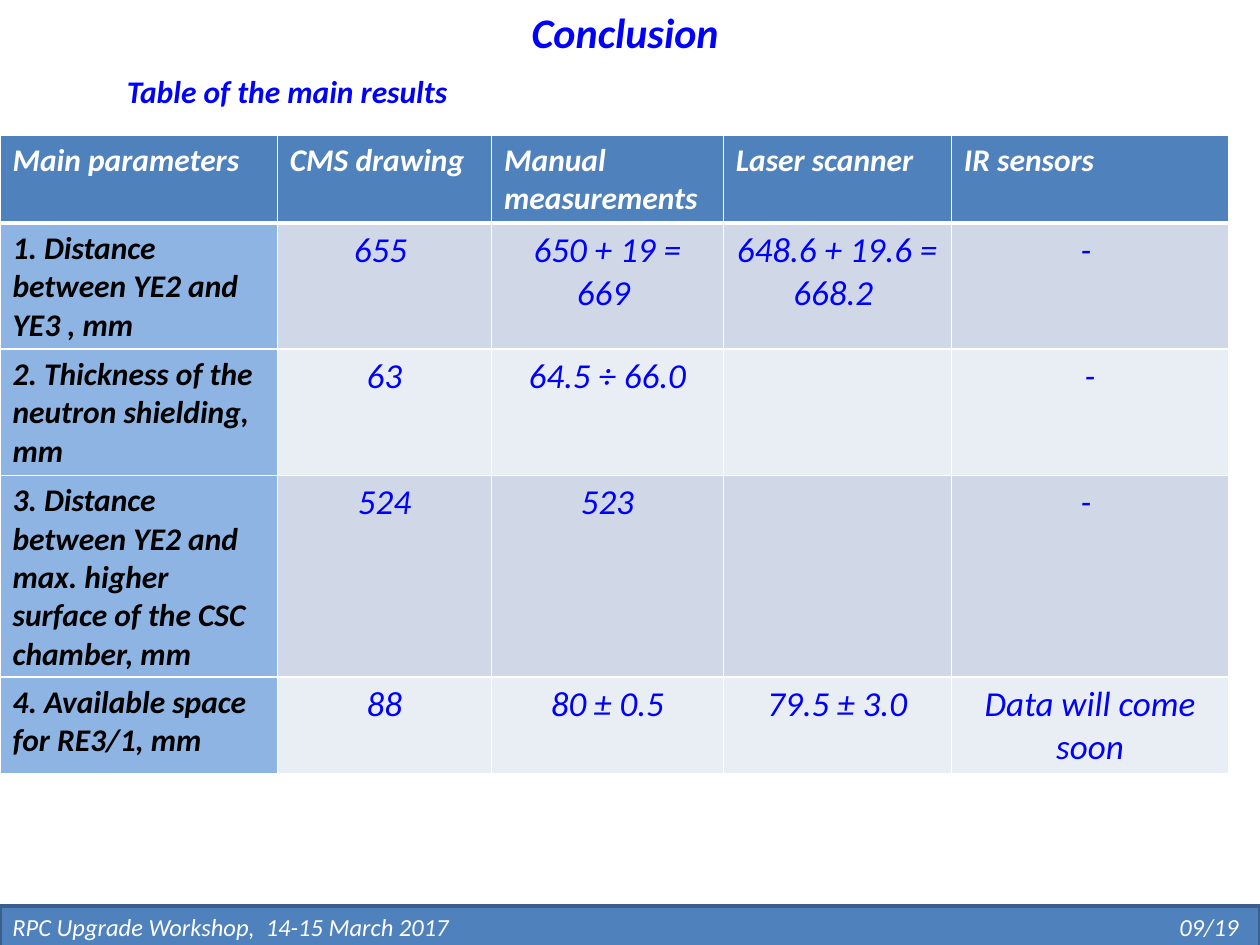
from dataclasses import dataclass

from lxml import etree
from pptx import Presentation
from pptx import util as u
from pptx.dml.color import RGBColor
from pptx.enum import shapes, text
from pptx.oxml import ns


@dataclass(frozen=True)
class Theme:
    font: str = "Calibri"
    accent: str = "0000FF"
    bar: str = "4F81BD"
    bar_line: str = "3A5F8C"
    label: str = "8EB4E3"
    bands: tuple = ("D0D8E8", "E9EDF4")
    light: str = "FFFFFF"
    dark: str = "000000"
    title_size: int = 24
    value_size: int = 20
    label_size: int = 18
    footer_size: int = 14


THEME = Theme()
HEADERS = ["Main parameters", "CMS drawing", "Manual measurements",
           "Laser scanner", "IR sensors"]
RESULTS = [
    ["1. Distance between YE2 and YE3 , mm", "655 ", "650 + 19 = 669 ",
     "648.6 + 19.6 = 668.2 ", "- "],
    ["2. Thickness of the neutron shielding, mm", "63", "64.5 ÷ 66.0", "", "-"],
    ["3. Distance between YE2 and max. higher surface of the CSC chamber, mm",
     "524", "523", "", "- "],
    ["4. Available space for RE3/1, mm", "88", "80 ± 0.5", "79.5 ± 3.0",
     "Data will come soon"],
]
COLUMN_WIDTHS = [5.59, 4.32, 4.67, 4.6, 5.59]
ROW_HEIGHTS = [1.75, 2.54, 2.54, 4.07, 1.93]


def rgb(color):
    return RGBColor.from_string(color)


def add_text(paragraph, content, size, color, bold=False, align=text.PP_ALIGN.LEFT):
    paragraph.alignment = align
    run = paragraph.add_run()
    run.text = content
    font = run.font
    font.name, font.size = THEME.font, u.Pt(size)
    font.bold, font.italic = bold, True
    font.color.rgb = rgb(color)


def add_title(slide, content):
    title = slide.shapes.title
    title.left, title.top = u.Cm(0), u.Cm(0)
    title.width, title.height = u.Cm(25.4), u.Cm(1.27)
    title.line.color.rgb = rgb(THEME.light)
    title.line.width = u.Pt(0.75)
    title.text_frame.vertical_anchor = text.MSO_ANCHOR.MIDDLE
    add_text(title.text_frame.paragraphs[0], content, THEME.title_size,
             THEME.accent, True, text.PP_ALIGN.CENTER)


def add_subtitle(slide, content):
    box = slide.shapes.add_textbox(u.Cm(2.31), u.Cm(1.32), u.Cm(7.65), u.Cm(1.02))
    box.text_frame.word_wrap = False
    add_text(box.text_frame.paragraphs[0], content, THEME.label_size,
             THEME.accent, True)


def set_borders(cell, top=1, bottom=1):
    properties = cell._tc.get_or_add_tcPr()
    for side, width in (("L", 1), ("R", 1), ("T", top), ("B", bottom)):
        line = etree.SubElement(properties, ns.qn(f"a:ln{side}"), w=str(u.Pt(width)))
        fill = etree.SubElement(line, ns.qn("a:solidFill"))
        etree.SubElement(fill, ns.qn("a:srgbClr"), val=THEME.light)


def fill_cell(cell, content, row, column):
    # Borders come before the fill in the cell properties
    set_borders(cell, top=3 if row == 1 else 1, bottom=3 if row == 0 else 1)
    if row == 0:
        fill, style = THEME.bar, (THEME.label_size, THEME.light, True)
    elif column == 0:
        fill, style = THEME.label, (THEME.label_size, THEME.dark, True)
    else:
        fill = THEME.bands[(row - 1) % 2]
        style = (THEME.value_size, THEME.accent, False, text.PP_ALIGN.CENTER)
    cell.fill.solid()
    cell.fill.fore_color.rgb = rgb(fill)
    if content:
        add_text(cell.text_frame.paragraphs[0], content, *style)


def add_results_table(slide):
    rows = [HEADERS, *RESULTS]
    table = slide.shapes.add_table(
        len(rows), len(HEADERS), u.Cm(0), u.Cm(2.72),
        u.Cm(sum(COLUMN_WIDTHS)), u.Cm(sum(ROW_HEIGHTS))).table
    for column, width in zip(table.columns, COLUMN_WIDTHS):
        column.width = u.Cm(width)
    for row, height in zip(table.rows, ROW_HEIGHTS):
        row.height = u.Cm(height)
    for row, contents in enumerate(rows):
        for column, content in enumerate(contents):
            fill_cell(table.cell(row, column), content, row, column)


def add_footer(slide, event, page):
    bar = slide.shapes.add_shape(shapes.MSO_SHAPE.RECTANGLE, u.Cm(0), u.Cm(18.26),
                                 u.Cm(25.4), u.Cm(0.86))
    bar.shadow.inherit = False
    bar.fill.solid()
    bar.fill.fore_color.rgb = rgb(THEME.bar)
    bar.line.color.rgb = rgb(THEME.bar_line)
    bar.line.width = u.Pt(2)
    bar.text_frame.vertical_anchor = text.MSO_ANCHOR.MIDDLE
    # A right tab carries the page number to the far edge
    paragraph = bar.text_frame.paragraphs[0]
    tabs = etree.SubElement(paragraph._p.get_or_add_pPr(), ns.qn("a:tabLst"))
    etree.SubElement(tabs, ns.qn("a:tab"), pos=str(u.Cm(24.72)), algn="r")
    for content in (event, "\t" + page):
        add_text(paragraph, content, THEME.footer_size, THEME.light)


def main():
    presentation = Presentation()
    presentation.slide_width, presentation.slide_height = u.Cm(25.4), u.Cm(19.05)
    slide = presentation.slides.add_slide(
        presentation.slide_layouts.get_by_name("Title Only"))

    # Headings
    add_title(slide, "Conclusion ")
    add_subtitle(slide, "Table of the main results")
    # Results
    add_results_table(slide)
    # Footer bar
    add_footer(slide, "RPC Upgrade Workshop,  14-15 March 2017", "09/19")

    presentation.save("out.pptx")


if __name__ == "__main__":
    main()
